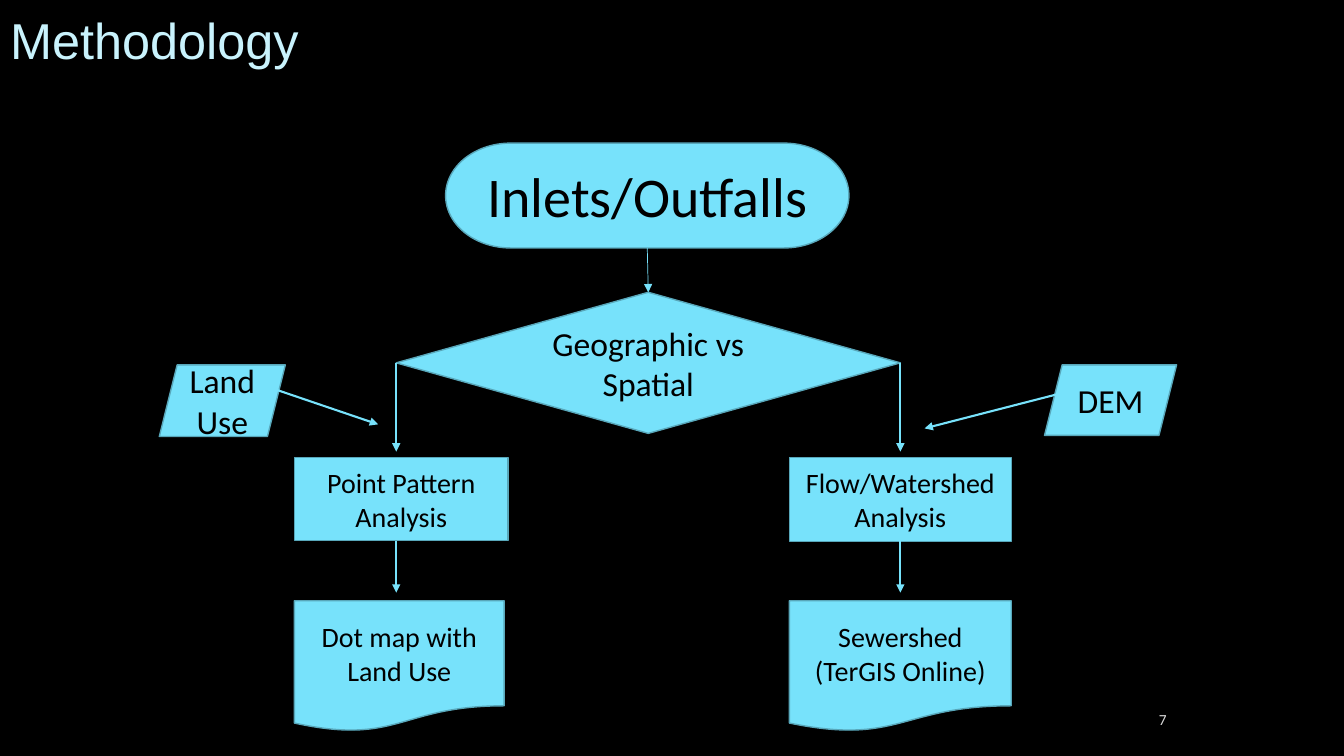
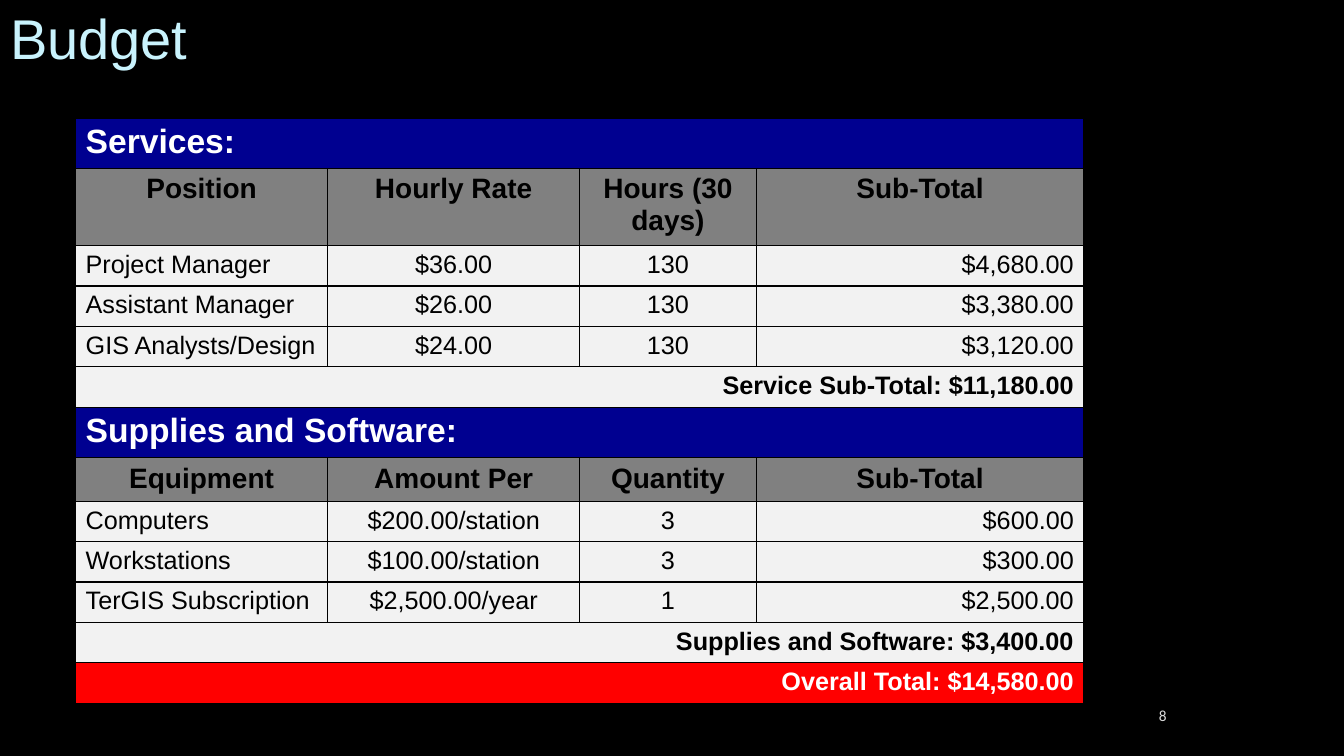
from dataclasses import dataclass

from lxml import etree
from pptx import Presentation
from pptx.dml.color import RGBColor
from pptx.enum.shapes import MSO_CONNECTOR, MSO_SHAPE
from pptx.enum.text import MSO_ANCHOR, MSO_AUTO_SIZE, PP_ALIGN
from pptx.oxml.ns import qn
from pptx.util import Pt

PX = 9144  # 100 px to the inch
LEFT, MID, RIGHT = PP_ALIGN.LEFT, PP_ALIGN.CENTER, PP_ALIGN.RIGHT
CENTRE, BOTTOM = MSO_ANCHOR.MIDDLE, MSO_ANCHOR.BOTTOM
STEP, PILL = MSO_SHAPE.FLOWCHART_PROCESS, MSO_SHAPE.FLOWCHART_TERMINATOR
CHOICE, PAGE = MSO_SHAPE.FLOWCHART_DECISION, MSO_SHAPE.FLOWCHART_DOCUMENT
INPUT = MSO_SHAPE.PARALLELOGRAM
STRAIGHT = MSO_CONNECTOR.STRAIGHT


@dataclass(frozen=True)
class Theme:
    black: str = "000000"
    white: str = "FFFFFF"
    title: str = "C9F3FD"
    node: str = "77E2FB"
    edge: str = "58A7BA"
    number: str = "D9D9D9"
    band: str = "000090"
    head: str = "808080"
    item: str = "F2F2F2"
    total: str = "FF0000"
    sans: str = "Arial"
    body: str = "Calibri"
    tiny: int = 11
    small: int = 18
    text: int = 20
    large: int = 24
    huge: int = 40


T = Theme()


def rgb(code):
    return RGBColor.from_string(code)


def write(frame, text, align, color, **font):
    para = frame.paragraphs[0]
    para.alignment = align
    run = para.add_run()
    run.text = text
    run.font.color.rgb = rgb(color)
    for key, value in font.items():
        setattr(run.font, key, value)


prs = Presentation()
prs.slide_width, prs.slide_height = 1333 * PX, 750 * PX
back = prs.slide_master.background.fill
back.solid()
back.fore_color.rgb = rgb(T.black)

# Titles and slide numbers
slides = []
for name, size, spacing, num, top in (
    ("Methodology", 36, 0.9, "7", 700),
    ("Budget", T.huge, 1.0, "8", 696),
):
    slide = prs.slides.add_slide(prs.slide_layouts[5])
    slides.append(slide)
    title = slide.shapes.title
    title.left, title.top, title.width, title.height = 0, 0, 1000 * PX, 75 * PX
    frame = title.text_frame
    frame.auto_size = MSO_AUTO_SIZE.NONE
    frame.vertical_anchor = BOTTOM
    frame.paragraphs[0].line_spacing = spacing
    write(frame, name, LEFT, T.title, size=Pt(size), name=T.sans)

    box = slide.shapes.add_textbox(1075 * PX, top * PX, 92 * PX, 28 * PX)
    box.text_frame.word_wrap = True
    box.text_frame.vertical_anchor = CENTRE
    write(box.text_frame, num, RIGHT, T.number, size=Pt(T.tiny), name=T.body)

flow, budget = slides

# Flowchart
nodes = {}
for key, kind, text, size, place in (
    ("water", STEP, "Flow/Watershed Analysis", T.text, (783, 454, 220, 83)),
    ("point", STEP, "Point Pattern Analysis", T.text, (292, 454, 212, 82)),
    ("start", PILL, "Inlets/Outfalls", T.huge, (442, 142, 400, 104)),
    ("split", CHOICE, "Geographic vs Spatial", T.large, (393, 290, 500, 140)),
    ("dots", PAGE, "Dot map with Land Use", T.text, (292, 596, 208, 130)),
    ("sewer", PAGE, "Sewershed (TerGIS Online)", T.text, (783, 596, 220, 130)),
    ("land", INPUT, "Land Use", T.large, (158, 362, 125, 71)),
    ("dem", INPUT, "DEM", T.large, (1036, 362, 131, 70)),
):
    node = flow.shapes.add_shape(kind, *(n * PX for n in place))
    node.shadow.inherit = False
    node.fill.solid()
    node.fill.fore_color.rgb = rgb(T.node)
    node.line.color.rgb = rgb(T.edge)
    node.line.width = Pt(1)
    node.text_frame.word_wrap = True
    node.text_frame.vertical_anchor = CENTRE
    write(node.text_frame, text, MID, T.black, size=Pt(size), name=T.body)
    nodes[key] = node

for ends, width, begin, end in (
    ((393, 360, 393, 448), 1.5, ("split", 1), None),
    ((893, 360, 893, 448), 1.5, ("split", 3), None),
    ((642, 246, 643, 290), 0.5, ("start", 2), ("split", 0)),
    ((393, 537, 393, 588), 1.5, None, None),
    ((893, 537, 893, 588), 1.5, ("water", 2), None),
    ((275, 387, 375, 421), 1.5, None, None),
    ((1053, 390, 917, 425), 1.5, None, None),
):
    arrow = flow.shapes.add_connector(STRAIGHT, *(n * PX for n in ends))
    if begin:
        arrow.begin_connect(nodes[begin[0]], begin[1])
    if end:
        arrow.end_connect(nodes[end[0]], end[1])
    arrow.line.color.rgb = rgb(T.node)
    arrow.line.width = Pt(width)
    props = arrow.line._get_or_add_ln()
    etree.SubElement(props, qn("a:tailEnd"), type="triangle")
    etree.SubElement(props.getparent(), qn("a:effectLst"))

# Budget table: fill, text colour, size, bold, alignment by column
looks = {
    "band": (T.band, T.white, T.large, True, (LEFT,)),
    "head": (T.head, T.black, T.text, True, (MID,) * 4),
    "item": (T.item, T.black, T.small, False, (LEFT, MID, MID, RIGHT)),
    "sum": (T.item, T.black, T.small, True, (RIGHT,)),
    "total": (T.total, T.white, T.small, True, (RIGHT,)),
}
rows = (
    ("band", 46, "Services:"),
    ("head", 71, "Position", "Hourly Rate", "Hours (30 days)", "Sub-Total"),
    ("item", 38, "Project Manager", "$36.00", "130", "$4,680.00"),
    ("item", 38, "Assistant Manager", "$26.00", "130", "$3,380.00"),
    ("item", 38, "GIS Analysts/Design", "$24.00", "130", "$3,120.00"),
    ("sum", 38, "Service Sub-Total: $11,180.00"),
    ("band", 46, "Supplies and Software:"),
    ("head", 40, "Equipment", "Amount Per", "Quantity", "Sub-Total"),
    ("item", 38, "Computers", "$200.00/station", "3", "$600.00"),
    ("item", 38, "Workstations", "$100.00/station", "3", "$300.00"),
    ("item", 38, "TerGIS Subscription", "$2,500.00/year", "1", "$2,500.00"),
    ("sum", 38, "Supplies and Software: $3,400.00"),
    ("total", 38, "Overall Total: $14,580.00"),
)
widths = (250, 250, 175, 325)
high = sum(row[1] for row in rows)
table = budget.shapes.add_table(
    len(rows), len(widths), 75 * PX, 117 * PX, sum(widths) * PX, high * PX
).table
table.first_row = table.horz_banding = False
for col, width in zip(table.columns, widths):
    col.width = width * PX

for r, (kind, height, *texts) in enumerate(rows):
    fill, color, size, bold, aligns = looks[kind]
    table.rows[r].height = height * PX
    if len(texts) == 1:
        table.cell(r, 0).merge(table.cell(r, len(widths) - 1))
    for cell in table.rows[r].cells:
        cell.fill.solid()
        cell.fill.fore_color.rgb = rgb(fill)
        props = cell._tc.get_or_add_tcPr()
        for i, side in enumerate(("lnL", "lnR", "lnT", "lnB")):
            line = etree.Element(qn("a:" + side), w=str(Pt(1)))
            paint = etree.SubElement(line, qn("a:solidFill"))
            etree.SubElement(paint, qn("a:srgbClr"), val=T.black)
            props.insert(i, line)
    for c, (text, align) in enumerate(zip(texts, aligns)):
        write(table.cell(r, c).text_frame, text, align, color,
              size=Pt(size), name=T.sans, bold=bold)

prs.save("out.pptx")
